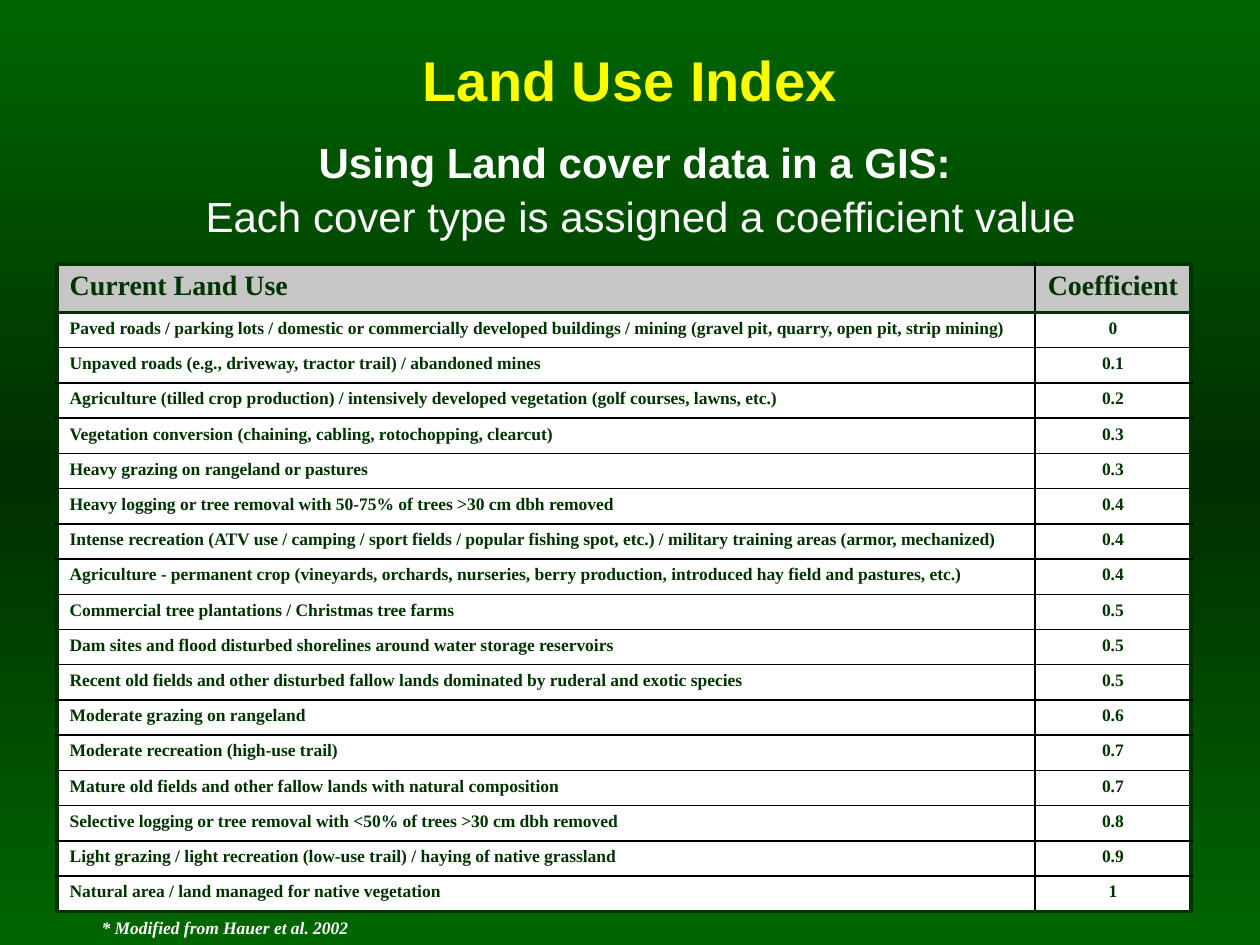
from copy import deepcopy
from dataclasses import dataclass

from lxml import etree
from pptx import Presentation
from pptx.dml.color import RGBColor
from pptx.enum.text import MSO_ANCHOR, MSO_AUTO_SIZE, PP_ALIGN
from pptx.oxml.ns import qn
from pptx.util import Cm, Pt

LEFT, CENTER = PP_ALIGN.LEFT, PP_ALIGN.CENTER
TOP, MIDDLE = MSO_ANCHOR.TOP, MSO_ANCHOR.MIDDLE
FIXED, GROW = MSO_AUTO_SIZE.NONE, MSO_AUTO_SIZE.SHAPE_TO_FIT_TEXT
PLAIN = "{2D5ABB26-0587-4C30-8999-92F81FD0307C}"

USES = [
    ("Paved roads / parking lots / domestic or commercially developed buildings / mining "
     "(gravel pit, quarry, open pit, strip mining)", "0"),
    ("Unpaved roads (e.g., driveway, tractor trail) / abandoned mines", "0.1"),
    ("Agriculture (tilled crop production) / intensively developed vegetation "
     "(golf courses, lawns, etc.)", "0.2"),
    ("Vegetation conversion (chaining, cabling, rotochopping, clearcut)", "0.3"),
    ("Heavy grazing on rangeland or pastures", "0.3"),
    ("Heavy logging or tree removal with 50-75% of trees >30 cm dbh removed", "0.4"),
    ("Intense recreation (ATV use / camping / sport fields / popular fishing spot, etc.) / "
     "military training areas (armor, mechanized)", "0.4"),
    ("Agriculture - permanent crop (vineyards, orchards, nurseries, berry production, "
     "introduced hay field and pastures, etc.)", "0.4"),
    ("Commercial tree plantations / Christmas tree farms", "0.5"),
    ("Dam sites and flood disturbed shorelines around water storage reservoirs", "0.5"),
    ("Recent old fields and other disturbed fallow lands dominated by ruderal and exotic "
     "species", "0.5"),
    ("Moderate grazing on rangeland", "0.6"),
    ("Moderate recreation (high-use trail)", "0.7"),
    ("Mature old fields and other fallow lands with natural composition", "0.7"),
    ("Selective logging or tree removal with <50% of trees >30 cm dbh removed", "0.8"),
    ("Light grazing / light recreation (low-use trail) / haying of native grassland", "0.9"),
    ("Natural area / land managed for native vegetation", "1"),
]


@dataclass(frozen=True)
class Theme:
    edge: str = "006600"
    core: str = "002F00"
    gold: str = "FFFF00"
    white: str = "FFFFFF"
    gray: str = "C6C6C6"
    dark: str = "003300"
    black: str = "000000"
    sans: str = "Arial"
    serif: str = "Times New Roman"
    title: int = 32
    body: int = 24
    head: int = 16
    small: int = 10
    thick: float = 2.25
    thin: float = 1


class Deck:
    """Holds the theme and the current slide, and draws each kind of element."""

    def __init__(self, theme):
        self.theme = theme
        self.file = Presentation()
        self.file.slide_width, self.file.slide_height = Cm(25.4), Cm(19.05)
        self.slide = self.file.slides.add_slide(self.file.slide_layouts[1])

    def place(self, shape, box):
        shape.left, shape.top, shape.width, shape.height = map(Cm, box)

    def style(self, par, font, size, color, bold=True, italic=False, align=LEFT):
        par.alignment = align
        for run in par.runs:
            run.font.name, run.font.size = font, Pt(size)
            run.font.bold, run.font.italic = bold, italic
            run.font.color.rgb = RGBColor.from_string(color)

    def hang(self, par):
        props = par._p.get_or_add_pPr()
        props.set("marL", str(Cm(0.95)))
        props.set("indent", str(-Cm(0.95)))
        return props

    def backdrop(self):
        fill = self.slide.background.fill
        fill.gradient()
        fill.gradient_angle = 270
        for stop in fill.gradient_stops:
            stop.color.rgb = RGBColor.from_string(self.theme.edge)
        stops = self.slide.element.find(".//" + qn("a:gsLst"))
        mid = deepcopy(stops[0])
        mid.set("pos", "50000")
        mid[0].set("val", self.theme.core)
        stops.insert(1, mid)

    def title(self, text, box):
        shape = self.slide.shapes.title
        self.place(shape, box)
        frame = shape.text_frame
        frame.text = text
        frame.auto_size, frame.vertical_anchor = FIXED, MIDDLE
        self.style(frame.paragraphs[0], self.theme.sans, self.theme.title,
                   self.theme.gold, align=CENTER)

    def body(self, lines, box):
        shape = self.slide.placeholders[1]
        self.place(shape, box)
        frame = shape.text_frame
        frame.text = "\n".join(lines)
        frame.auto_size, frame.vertical_anchor = FIXED, TOP
        for rank, par in enumerate(frame.paragraphs):
            etree.SubElement(self.hang(par), qn("a:buNone"))
            par.line_spacing = 0.9
            if rank == 0:
                par.space_before = Pt(0)
            self.style(par, self.theme.sans, self.theme.body, self.theme.white,
                       bold=rank == 0, align=CENTER)

    def note(self, text, box):
        frame = self.slide.shapes.add_textbox(*map(Cm, box)).text_frame
        frame.word_wrap, frame.auto_size = True, GROW
        frame.text = text
        self.style(frame.paragraphs[0], self.theme.serif, self.theme.small,
                   self.theme.white, italic=True)

    def border(self, cell, side, thick):
        width = self.theme.thick if thick else self.theme.thin
        color = self.theme.dark if thick else self.theme.black
        line = etree.SubElement(cell._tc.get_or_add_tcPr(), qn("a:ln" + side),
                                w=str(Pt(width)))
        fill = etree.SubElement(line, qn("a:solidFill"))
        etree.SubElement(fill, qn("a:srgbClr"), val=color)

    def cell(self, cell, text, size, fill, col, thick):
        cell.text = text
        par = cell.text_frame.paragraphs[0]
        self.hang(par)
        self.style(par, self.theme.serif, size, self.theme.dark,
                   align=CENTER if col else LEFT)
        for side in "LRTB":
            self.border(cell, side, side in thick)
        cell.fill.solid()
        cell.fill.fore_color.rgb = RGBColor.from_string(fill)

    def table(self, head, rows, box, widths, tall):
        look = self.theme
        data = [head, *rows]
        last = len(data) - 1
        grid = self.slide.shapes.add_table(last + 2, len(head), *map(Cm, box)).table
        grid.first_row = grid.horz_banding = False
        grid._tbl.tblPr.find(qn("a:tableStyleId")).text = PLAIN
        for col, width in zip(grid.columns, widths):
            col.width = Cm(width)
        for rank, row in enumerate(grid.rows):
            row.height = Cm(tall[min(rank, 2)])
        lead = grid.cell(0, 0)
        lead.merge(grid.cell(0, len(head) - 1))
        lead.margin_top = lead.margin_bottom = 0
        self.border(lead, "B", True)
        for rank, texts in enumerate(data):
            size, fill = (look.small, look.white) if rank else (look.head, look.gray)
            ends = ("T" if rank < 2 else "") + ("B" if rank in (0, last) else "")
            for col, text in enumerate(texts):
                self.cell(grid.cell(rank + 1, col), text, size, fill, col,
                          ends + "LR"[col])


def main():
    deck = Deck(Theme())
    deck.backdrop()
    deck.title("Land Use Index", (1.27, 0.64, 22.86, 1.9))
    deck.body(["Using Land cover data in a GIS: ",
               "Each cover type is assigned a coefficient value"],
              (2.54, 2.74, 20.75, 1.8))
    deck.table(("Current Land Use", "Coefficient"), USES, (1.15, 4.52, 22.86, 13.87),
               (19.71, 3.15), (0.8, 0.98, 0.71))
    deck.note("* Modified from Hauer et al. 2002", (1.8, 18.36, 18.62, 0.69))
    deck.file.save("out.pptx")


if __name__ == "__main__":
    main()
